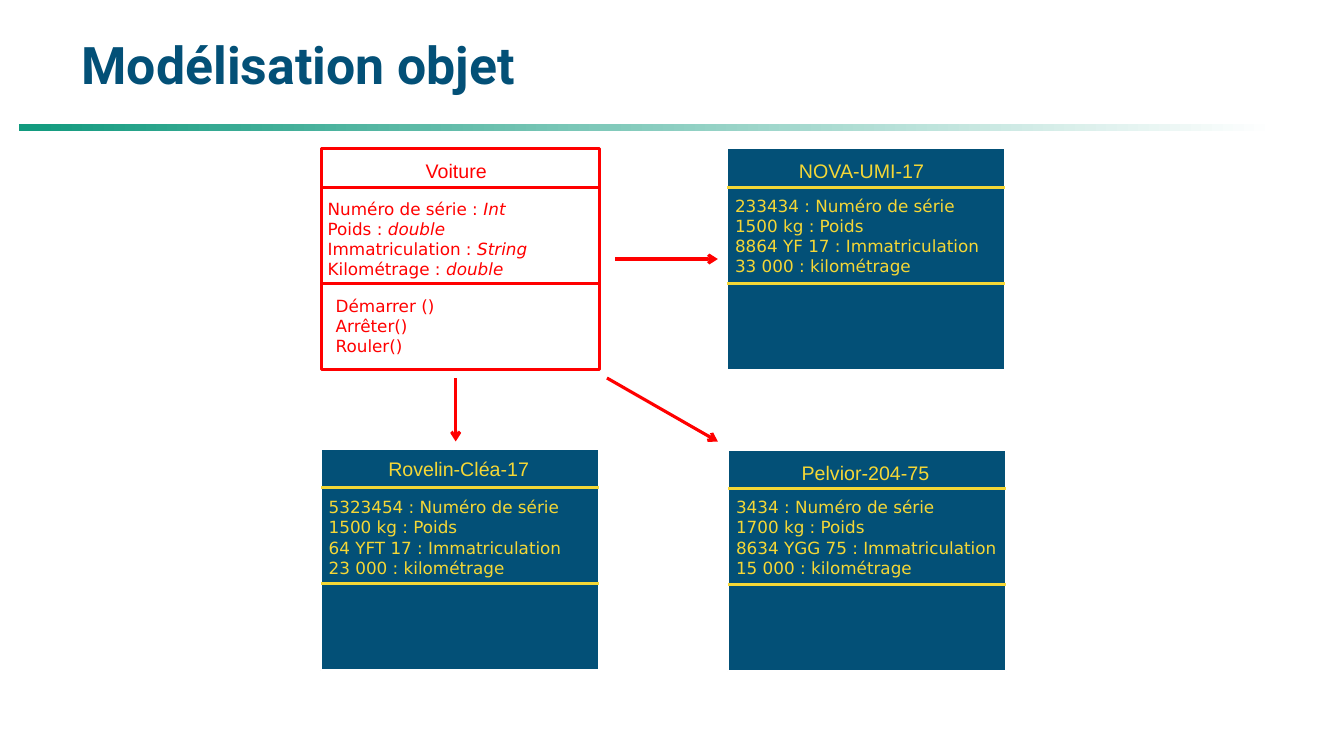
from lxml.etree import SubElement
from pptx import Presentation
from pptx.dml.color import RGBColor
from pptx.enum.shapes import MSO_CONNECTOR, MSO_SHAPE
from pptx.enum.text import MSO_ANCHOR, PP_ALIGN
from pptx.oxml.ns import qn
from pptx.util import Pt

PX = 9144  # EMU, 100 px to the inch
COLORS = {"white": "FFFFFF", "red": "FF0000", "blue": "035077",
          "yellow": "F5D736", "green": "119A7E"}
RGB = {name: RGBColor.from_string(code) for name, code in COLORS.items()}

prs = Presentation()
prs.slide_width, prs.slide_height = 1333 * PX, 750 * PX
slide = prs.slides.add_slide(prs.slide_layouts[6])
shapes = slide.shapes


def add_text(paragraphs, left, top, width, height, *, size, font, color, bold=False,
             align=PP_ALIGN.LEFT, anchor=MSO_ANCHOR.TOP, inset=(0, 0), spacing=None):
    """Each paragraph is a list of runs; every second run is italic."""
    frame = shapes.add_textbox(left * PX, top * PX, width * PX, height * PX).text_frame
    frame.word_wrap = True
    frame.vertical_anchor = anchor
    frame.margin_left = frame.margin_right = inset[0] * PX
    frame.margin_top = frame.margin_bottom = inset[1] * PX
    for index, runs in enumerate(paragraphs):
        paragraph = frame.paragraphs[0] if index == 0 else frame.add_paragraph()
        paragraph.alignment = align
        paragraph.line_spacing = spacing
        for position, text in enumerate(runs):
            run = paragraph.add_run()
            run.text = text
            run.font.size, run.font.name = Pt(size), font
            run.font.bold, run.font.italic = bold, position % 2 == 1
            run.font.color.rgb = RGB[color]


def add_line(x1, y1, x2, y2, color, arrow=False):
    line = shapes.add_connector(MSO_CONNECTOR.STRAIGHT, x1 * PX, y1 * PX, x2 * PX, y2 * PX)
    line.line.color.rgb = RGB[color]
    line.line.width = Pt(2.25)
    if arrow:
        SubElement(line.line._get_or_add_ln(), qn("a:tailEnd"), type="arrow")
    SubElement(line._element.spPr, qn("a:effectLst"))


# Heading and its rule
header_rule = shapes.add_shape(MSO_SHAPE.RECTANGLE, 19 * PX, 123 * PX, 1246 * PX, 7 * PX)
header_rule.shadow.inherit = False
header_rule.line.fill.background()
header_rule.fill.gradient()
header_rule.fill.gradient_angle = 0
for stop, color in zip(header_rule.fill.gradient_stops, ("green", "white")):
    stop.color.rgb = RGB[color]
add_text([["Modélisation objet"]], 81, 22, 1159, 90, size=37, font="Roboto",
         color="blue", bold=True, anchor=MSO_ANCHOR.MIDDLE, spacing=0.9)

# Class and its instances: left, top, fill, outline, outline width, ink,
# name, name box (left, top, width), attributes top, attributes
CARD_WIDTH, CARD_HEIGHT = 276, 220
cards = [
    (319, 147, "white", "red", 2.25, "red", "Voiture", (342, 153, 221), 197,
     [["Numéro de série : ", "Int"], ["Poids : ", "double"],
      ["Immatriculation : ", "String"], ["Kilométrage : ", "double"]]),
    (721, 147, "blue", "white", 1.5, "yellow", "NOVA-UMI-17", (744, 153, 221), 194,
     [["233434 : Numéro de série"], ["1500 kg : Poids"],
      ["8864 YF 17 : Immatriculation"], ["33 000 : kilométrage"]]),
    (318, 445, "blue", "white", 1.5, "yellow", "Rovelin-Cléa-17", (332, 448, 246), 493,
     [["5323454 : Numéro de série"], ["1500 kg : Poids"],
      ["64 YFT 17 : Immatriculation"], ["23 000 : kilométrage"]]),
    (722, 446, "blue", "white", 1.5, "yellow", "Pelvior-204-75", (733, 452, 251), 493,
     [["3434 : Numéro de série"], ["1700 kg : Poids"],
      ["8634 YGG 75 : Immatriculation"], ["15 000 : kilométrage"]]),
]
for (left, top, fill, outline, outline_width, ink,
     name, name_box, attributes_top, attributes) in cards:
    card = shapes.add_shape(MSO_SHAPE.RECTANGLE, left * PX, top * PX,
                            CARD_WIDTH * PX, CARD_HEIGHT * PX)
    card.shadow.inherit = False
    card.fill.solid()
    card.fill.fore_color.rgb = RGB[fill]
    card.line.color.rgb = RGB[outline]
    card.line.width = Pt(outline_width)
    for divider in (39, 134):
        add_line(left, top + divider, left + CARD_WIDTH, top + divider, ink)
    add_text([[name]], *name_box, 33, size=14, font="Arial", color=ink,
             align=PP_ALIGN.CENTER, inset=(10, 5))
    add_text(attributes, left + 8 - (ink == "red") * 2, attributes_top, 268, 81,
             size=12, font="DejaVu Sans", color=ink)

add_text([["Démarrer ()"], ["Arrêter()"], ["Rouler()"]], 333, 293, 243, 61,
         size=12, font="DejaVu Sans", color="red")

# From the class to each instance
for ends in [(452, 375, 452, 438), (602, 375, 712, 438), (610, 257, 712, 257)]:
    add_line(*ends, "red", arrow=True)

prs.save("out.pptx")
